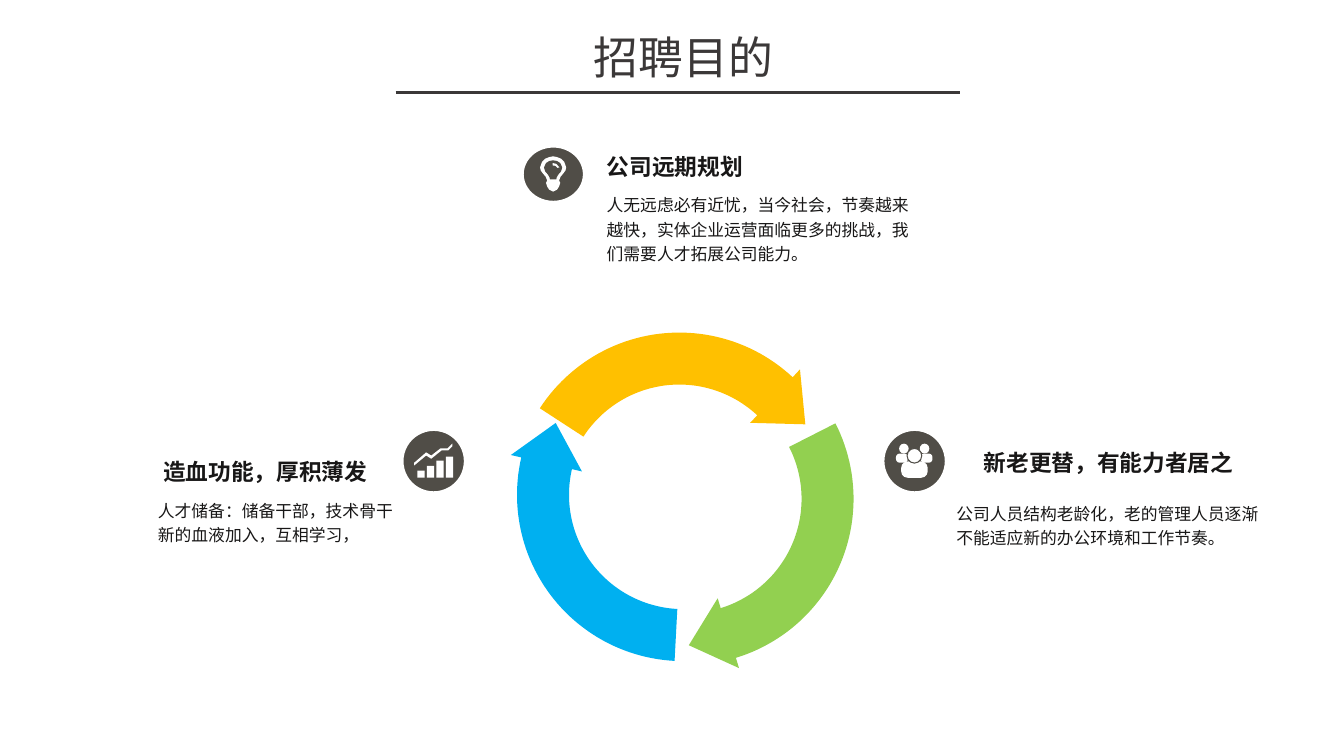
from math import cos, radians, sin

from lxml import etree
from pptx import Presentation
from pptx.dml.color import RGBColor
from pptx.enum.shapes import MSO_CONNECTOR, MSO_SHAPE
from pptx.enum.text import MSO_ANCHOR, MSO_AUTO_SIZE, PP_ALIGN
from pptx.oxml.ns import qn
from pptx.util import Cm, Pt

OVAL, RECT = MSO_SHAPE.OVAL, MSO_SHAPE.RECTANGLE
ROUND = MSO_SHAPE.ROUNDED_RECTANGLE
STRAIGHT = MSO_CONNECTOR.STRAIGHT
MIDDLE, CENTER = MSO_ANCHOR.MIDDLE, PP_ALIGN.CENTER
NO_FIT = MSO_AUTO_SIZE.NONE

FONT = "Noto Sans CJK SC"
HEX = {
    "title": "3B3838", "text": "181717", "dark": "504D47", "white": "FFFFFF",
    "gold": "FFC000", "green": "92D050", "blue": "00B0F0",
}


def color(name):
    return RGBColor.from_string(HEX[name])


def style(para, size, tone, bold=False):
    font = para.font
    font.size, font.bold = Pt(size), bold
    font.color.rgb = color(tone)
    font.name = FONT
    # East Asian text takes its typeface from a:ea
    etree.SubElement(font._rPr, qn("a:ea"), typeface=FONT)


def paint(shape, fill, edge=None, width=2.25):
    shape.shadow.inherit = False
    shape.fill.solid()
    shape.fill.fore_color.rgb = color(fill)
    if edge:
        shape.line.color.rgb = color(edge)
        shape.line.width = Pt(width)
    else:
        shape.line.fill.background()


def add_form(slide, kind, box, fill, edge=None, width=2.25):
    shape = slide.shapes.add_shape(kind, *map(Cm, box))
    paint(shape, fill, edge, width)
    return shape


def add_outline(slide, points, fill):
    """Draw a closed polygon from points in centimetres."""
    spots = [(Cm(x), Cm(y)) for x, y in points]
    pen = slide.shapes.build_freeform(*spots[0])
    pen.add_line_segments(spots[1:], close=True)
    paint(pen.convert_to_shape(), fill)


def add_title(slide, text):
    title = slide.shapes.title
    title.left, title.top, title.width, title.height = map(
        Cm, (9.53, 0.61, 15.39, 1.63))
    frame = title.text_frame
    frame.text = text
    frame.auto_size, frame.vertical_anchor = NO_FIT, MIDDLE
    para = frame.paragraphs[0]
    para.alignment = CENTER
    style(para, 32, "title")

    rule = slide.shapes.add_connector(
        STRAIGHT, Cm(9.97), Cm(2.34), Cm(24.19), Cm(2.34))
    rule.line.color.rgb = color("title")
    rule.line.width = Pt(2)
    etree.SubElement(rule._element.spPr, qn("a:effectLst"))


def add_text(slide, box, lines, head=False):
    frame = slide.shapes.add_textbox(*map(Cm, box)).text_frame
    frame.word_wrap = True
    frame.text = "\n".join(lines)
    for para in frame.paragraphs:
        if head:
            style(para, 16.2, "text", True)
        else:
            para.line_spacing = 1.2
            style(para, 12, "text")


def add_arrow(slide, mid, turn, fill):
    """Draw one bent arrow of the ring, turned clockwise in degrees."""
    def spot(radius, angle):
        rad = radians(angle + turn)
        return mid[0] + radius * sin(rad), mid[1] - radius * cos(rad)

    tail, neck, tip = -57, 43, 59.4
    arc = range(tail, neck + 1, 2)
    outer = [spot(4.19, a) for a in arc]
    head = [spot(4.46, neck), spot(3.69, tip), spot(2.62, neck)]
    inner = [spot(2.88, a) for a in reversed(arc)]
    add_outline(slide, outer + head + inner, fill)


def add_bulb(slide):
    add_form(slide, OVAL, (13.16, 3.68, 1.57, 1.42), "dark", "white")

    def mirror(half):
        sides = half + [(-x, y) for x, y in reversed(half[1:-1])]
        return [(13.94 + x, 3.94 + y) for x, y in sides]

    glass = [(0, 0), (.1, .02), (.2, .06), (.28, .14), (.33, .28), (.31, .36),
             (.25, .44), (.19, .51), (.15, .61), (.18, .67), (.15, .76),
             (.1, .84), (0, .89)]
    hollow = [(0, .1), (.1, .12), (.18, .17), (.23, .28), (.2, .38),
              (.13, .46), (.09, .53), (.08, .58), (0, .58)]
    add_outline(slide, mirror(glass), "white")
    add_outline(slide, mirror(hollow), "dark")
    add_outline(slide, [(13.93, 4.11), (14.02, 4.13), (14.1, 4.22),
                        (14.05, 4.23), (14, 4.18), (13.93, 4.17)], "white")


def add_team(slide):
    add_form(slide, OVAL, (22.25, 10.82, 1.6, 1.6), "dark", "white")
    for left in (22.58, 23.2):
        body = add_form(slide, ROUND, (left, 11.43, 0.3, 0.23), "white")
        body.adjustments[0] = 0.4
    for left in (22.66, 23.18):
        add_form(slide, OVAL, (left, 11.18, 0.24, 0.25), "white")
    body = add_form(slide, ROUND, (22.71, 11.63, 0.67, 0.41), "white")
    body.adjustments[0] = 0.4
    add_form(slide, OVAL, (22.86, 11.3, 0.37, 0.37), "white", "dark", 0.75)


def add_growth(slide):
    add_form(slide, OVAL, (10.13, 10.82, 1.6, 1.6), "dark", "white")
    for i, tall in enumerate((0.18, 0.3, 0.43, 0.53)):
        add_form(slide, RECT, (10.52 + 0.24 * i, 12.04 - tall, 0.18, tall),
                 "white")
    add_outline(slide, [
        (11.28, 11.3), (11.1, 11.3), (10.87, 11.48), (10.74, 11.4),
        (10.44, 11.66), (10.44, 11.73), (10.74, 11.48), (10.87, 11.56),
        (11.13, 11.35), (11.3, 11.35), (11.4, 11.25), (11.4, 11.18)], "white")


def main():
    deck = Presentation()
    deck.slide_width, deck.slide_height = Cm(33.87), Cm(19.05)
    slide = deck.slides.add_slide(deck.slide_layouts[5])
    add_title(slide, "招聘目的")

    ring = [((17.12, 12.57), "gold"), ((17.32, 12.57), "green"),
            ((17.22, 12.47), "blue")]
    for i, (mid, fill) in enumerate(ring):
        add_arrow(slide, mid, 120 * i, fill)

    add_bulb(slide)
    add_team(slide)
    add_growth(slide)

    goals = [
        ("公司远期规划", (15.04, 3.72, 6.3, 0.97),
         ["人无远虑必有近忧，当今社会，节奏越来越快，实体企业运营面临更多的挑战，"
          "我们需要人才拓展公司能力。"], (15.04, 4.69, 8.28, 2.62)),
        ("造血功能，厚积薄发", (3.86, 11.4, 6.1, 0.97),
         ["人才储备：储备干部，技术骨干", "新的血液加入，互相学习，"],
         (3.73, 12.4, 7.14, 3.07)),
        ("新老更替，有能力者居之", (24.54, 11.18, 7.2, 0.97),
         ["公司人员结构老龄化，老的管理人员逐渐不能适应新的办公环境和工作节奏。"],
         (23.85, 12.46, 8.13, 2.62)),
    ]
    for head, top, lines, box in goals:
        add_text(slide, top, [head], head=True)
        add_text(slide, box, lines)
    deck.save("out.pptx")


if __name__ == "__main__":
    main()
